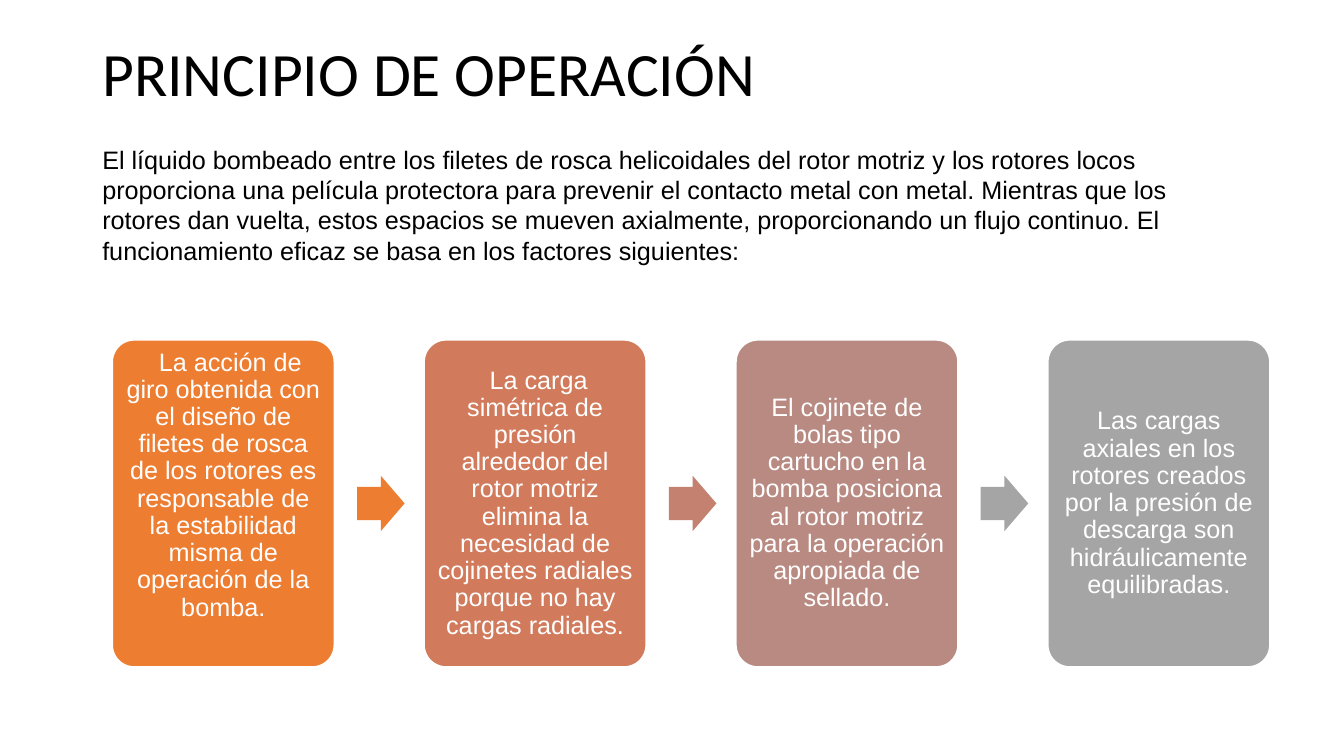
from pptx import Presentation
from pptx.util import Pt
from pptx.dml.color import RGBColor as Rgb
from pptx.enum.shapes import MSO_SHAPE as Kind
from pptx.enum.text import PP_ALIGN as Align, MSO_ANCHOR as Anchor

TITLE = "PRINCIPIO DE OPERACIÓN"
INTRO = (
    "El líquido bombeado entre los filetes de rosca helicoidales del rotor motriz "
    "y los rotores locos proporciona una película protectora para prevenir el "
    "contacto metal con metal. Mientras que los rotores dan vuelta, estos espacios "
    "se mueven axialmente, proporcionando un flujo continuo. El funcionamiento "
    "eficaz se basa en los factores siguientes:"
)
STEPS = [
    {"text": "La acción de giro obtenida con el diseño de filetes de rosca de los "
             "rotores es responsable de la estabilidad misma de operación de la bomba.",
     "fill": "ED7D31", "arrow": "ED7D31", "indent": 10, "lift": 25.7},
    {"text": "La carga simétrica de presión alrededor del rotor motriz elimina la "
             "necesidad de cojinetes radiales porque no hay cargas radiales.",
     "fill": "D17B5C", "arrow": "C48170", "indent": 5, "lift": 0},
    {"text": "El cojinete de bolas tipo cartucho en la bomba posiciona al rotor "
             "motriz para la operación apropiada de sellado.",
     "fill": "B98A82", "arrow": "A5A5A5", "indent": 0, "lift": 0},
    {"text": "Las cargas axiales en los rotores creados por la presión de descarga "
             "son hidráulicamente equilibradas.",
     "fill": "A5A5A5", "arrow": None, "indent": 0, "lift": 0},
]
THEME = {"head": "Calibri", "body": "Arial", "big": 44, "small": 18,
         "ink": "000000", "pale": "FFFFFF"}

LEFT, TOP, WIDE, HIGH, PITCH = 80, 242.6, 159, 234, 222.75
GAP, LONG, TALL = 16, 34, 39.6
PAD = 5


def write(frame, text, font, size, color, space=1):
    frame.word_wrap = True
    frame.text = text
    para = frame.paragraphs[0]
    para.line_spacing = space
    face = para.runs[0].font
    face.name = font
    face.size = Pt(size)
    face.color.rgb = Rgb.from_string(color)
    return para


def label(slide, box, text, font, size, space=1):
    frame = slide.shapes.add_textbox(*map(Pt, box)).text_frame
    write(frame, text, font, size, THEME["ink"], space)
    return frame


def block(slide, kind, box, fill, bends):
    shape = slide.shapes.add_shape(kind, *map(Pt, box))
    shape.shadow.inherit = False
    shape.fill.solid()
    shape.fill.fore_color.rgb = Rgb.from_string(fill)
    shape.line.fill.background()
    for i, bend in enumerate(bends):
        shape.adjustments[i] = bend
    return shape


def card(slide, left, step):
    box = left, TOP, WIDE, HIGH
    shape = block(slide, Kind.ROUNDED_RECTANGLE, box, step["fill"], [0.1])
    shape.line.color.rgb = Rgb.from_string(THEME["pale"])
    shape.line.width = Pt(1.5)
    frame = shape.text_frame
    frame.margin_left = frame.margin_right = frame.margin_top = Pt(PAD)
    frame.margin_bottom = Pt(PAD + step["lift"])
    frame.vertical_anchor = Anchor.MIDDLE
    para = write(frame, step["text"], THEME["body"], THEME["small"],
                 THEME["pale"], 0.9)
    para.alignment = Align.CENTER
    para._p.get_or_add_pPr().set("indent", str(Pt(step["indent"])))


def main():
    deck = Presentation()
    deck.slide_width, deck.slide_height = Pt(960), Pt(540)
    slide = deck.slides.add_slide(deck.slide_layouts[6])
    title = label(slide, (66, 28.8, 828, 52), TITLE, THEME["head"], THEME["big"], 0.9)
    title.vertical_anchor = Anchor.MIDDLE
    label(slide, (66, 99.4, 828, 116.6), INTRO, THEME["body"], THEME["small"])
    for i, step in enumerate(STEPS):
        left = LEFT + i * PITCH
        card(slide, left, step)
        if step["arrow"]:
            box = left + WIDE + GAP, TOP + (HIGH - TALL) / 2, LONG, TALL
            block(slide, Kind.RIGHT_ARROW, box, step["arrow"], [0.6, 0.5])
    deck.save("out.pptx")


if __name__ == "__main__":
    main()
